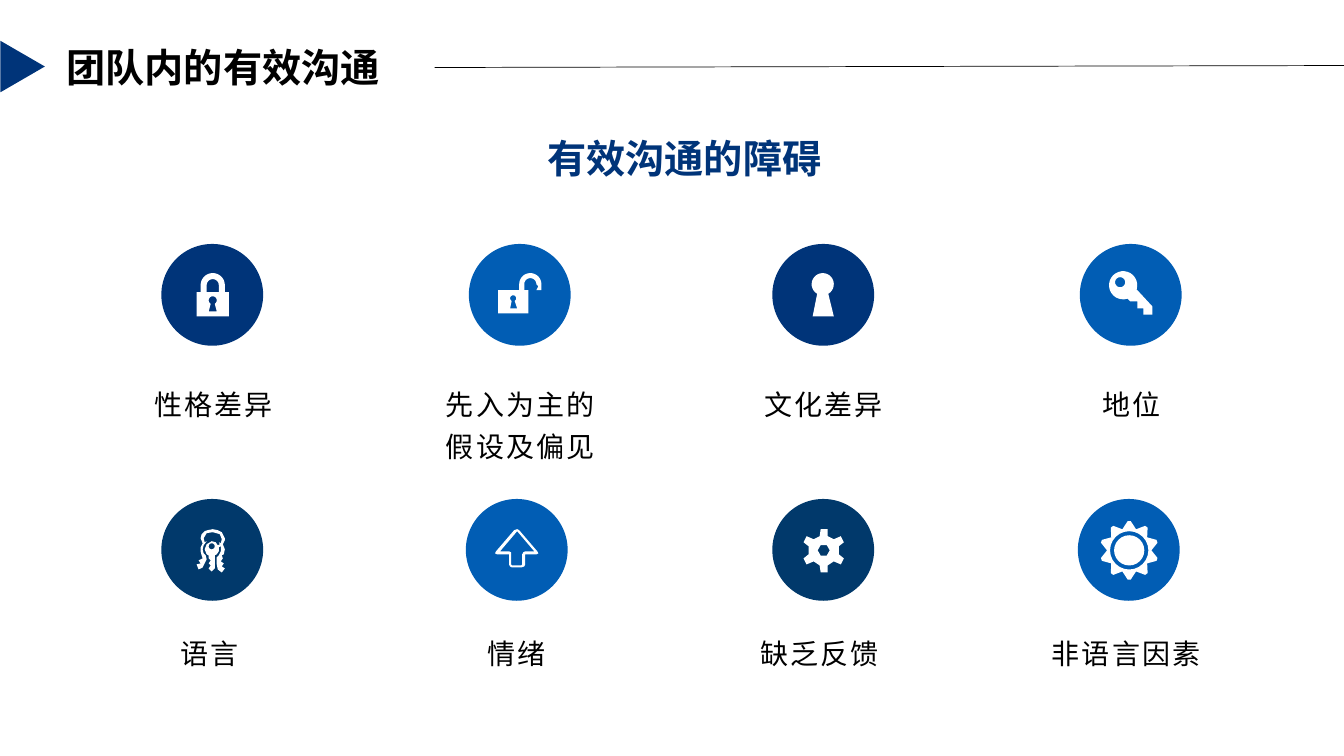
import math
from lxml import etree
from pptx import Presentation
from pptx.dml.color import RGBColor
from pptx.enum import shapes, text
from pptx.oxml.ns import qn
from pptx.util import Inches, Pt

NAVY = RGBColor(0x00, 0x34, 0x79)
BLUE = RGBColor(0x01, 0x5D, 0xB4)
DEEP = RGBColor(0x01, 0x39, 0x6B)
BLACK = RGBColor(0, 0, 0)
WHITE = RGBColor(0xFF, 0xFF, 0xFF)


def style(r, font, size, color, bold=False):
    """Format a run, with the font also set for East Asian text."""
    r.font.name = font
    r.font.size = Pt(size)
    r.font.bold = bold
    r.font.color.rgb = color
    ea = etree.SubElement(r.font._element, qn("a:ea"))
    ea.set("typeface", font)


def arc(cx, cy, radius, start=0, end=360, steps=24):
    """Points on an arc; degrees run clockwise from the right."""
    angles = [math.radians(start + (end - start) * i / steps) for i in range(steps + 1)]
    return [(cx + radius * math.cos(a), cy + radius * math.sin(a)) for a in angles]


prs = Presentation()
prs.slide_width = Inches(13.33)
prs.slide_height = Inches(7.5)
s = prs.slides.add_slide(prs.slide_layouts[5])

# Title bar
title = s.shapes.title
title.left, title.top = Inches(0.56), Inches(0.38)
title.width, title.height = Inches(3.75), Inches(0.57)
tf = title.text_frame
tf.text = "团队内的有效沟通"
tf.vertical_anchor = text.MSO_ANCHOR.TOP
tf.auto_size = text.MSO_AUTO_SIZE.SHAPE_TO_FIT_TEXT
tf.paragraphs[0].alignment = text.PP_ALIGN.JUSTIFY
style(tf.paragraphs[0].runs[0], "Noto Sans CJK JP", 28, BLACK, True)

sp = s.shapes.add_shape(shapes.MSO_SHAPE.ISOSCELES_TRIANGLE,
                        Inches(-0.03), Inches(0.44), Inches(0.51), Inches(0.44))
sp.rotation = 90
sp.shadow.inherit = False
sp.fill.solid()
sp.fill.fore_color.rgb = NAVY
sp.line.fill.background()

rule = s.shapes.add_connector(shapes.MSO_CONNECTOR.STRAIGHT,
                              Inches(4.31), Inches(0.67), Inches(13.33), Inches(0.65))
rule.line.color.rgb = BLACK
rule.line.width = Pt(0.5)
etree.SubElement(rule._element.spPr, qn("a:effectLst"))

# Subtitle
tf = s.shapes.add_textbox(Inches(5.33), Inches(1.28), Inches(2.96), Inches(0.57)).text_frame
tf.text = "有效沟通的障碍"
tf.word_wrap = False
tf.auto_size = text.MSO_AUTO_SIZE.SHAPE_TO_FIT_TEXT
style(tf.paragraphs[0].runs[0], "Noto Sans CJK SC", 28, NAVY, True)

# Circles and labels: circle top, label top, then (circle left, label left, colour, label)
rows = [
    (2.42, 3.73, [(1.6, 0.68, NAVY, "性格差异"), (4.65, 3.72, BLUE, "先入为主的\n假设及偏见"),
                  (7.66, 6.73, NAVY, "文化差异"), (10.71, 9.78, BLUE, "地位")]),
    (4.95, 6.2, [(1.6, 0.64, DEEP, "语言"), (4.62, 3.68, BLUE, "情绪"),
                 (7.66, 6.69, DEEP, "缺乏反馈"), (10.69, 9.73, BLUE, "非语言因素")]),
]
for circle_top, label_top, barriers in rows:
    for circle_left, label_left, color, label in barriers:
        sp = s.shapes.add_shape(shapes.MSO_SHAPE.OVAL, Inches(circle_left),
                                Inches(circle_top), Inches(1.01), Inches(1.01))
        sp.shadow.inherit = False
        sp.fill.solid()
        sp.fill.fore_color.rgb = color
        sp.line.fill.background()

        tf = s.shapes.add_textbox(Inches(label_left), Inches(label_top),
                                  Inches(2.88), Inches(0.6)).text_frame
        tf.text = label
        tf.word_wrap = True
        tf.margin_left = tf.margin_right = tf.margin_top = tf.margin_bottom = Inches(0.05)
        for p in tf.paragraphs:
            p.alignment = text.PP_ALIGN.CENTER
            p.line_spacing = 1.2
            p.space_before = Pt(1)
            style(p.runs[0], "Noto Sans CJK SC", 20, BLACK)
            p.runs[0].font._element.set("spc", "150")

# Icons: each is an outer contour followed by its holes
padlock = [
    [(1.95, 3.14), (1.95, 2.9), (1.99, 2.9), *arc(2.11, 2.83, 0.12, 180, 360),
     (2.23, 2.9), (2.27, 2.9), (2.27, 3.14)],
    [(2.05, 2.9), *arc(2.11, 2.83, 0.06, 180, 360), (2.17, 2.9)],
    [*arc(2.11, 2.98, 0.04, 120, 420), (2.15, 3.09), (2.07, 3.09)],
]
open_padlock = [
    [(4.94, 2.88), (5.15, 2.88), *arc(5.26, 2.82, 0.11, 180, 360), (5.37, 2.88),
     (5.32, 2.88), (5.34, 2.84), *arc(5.26, 2.82, 0.06, 360, 180), (5.2, 2.88),
     (5.24, 2.88), (5.24, 3.11), (4.94, 3.11)],
    [*arc(5.09, 2.96, 0.03, 120, 420), (5.13, 3.06), (5.06, 3.06)],
]
keyhole = [[*arc(8.16, 2.82, 0.11, 120, 420), (8.27, 3.14), (8.06, 3.14)]]
key = [
    [*arc(11.14, 2.83, 0.14, 72, 377), (11.43, 3.04), (11.43, 3.12), (11.34, 3.12),
     (11.34, 3.06), (11.28, 3.06), (11.28, 2.99), (11.21, 2.99)],
    arc(11.11, 2.8, 0.05),
]
key_ring = [
    [(2.22, 5.5), (2.23, 5.45), (2.21, 5.4), (2.23, 5.36), (2.23, 5.34), (2.2, 5.28),
     (2.16, 5.26), (2.11, 5.25), (2.06, 5.26), (2.03, 5.27), (2, 5.3), (1.99, 5.34),
     (2.01, 5.39), (1.99, 5.43), (1.99, 5.47), (2, 5.51), (2.01, 5.54), (1.97, 5.56),
     (1.99, 5.59), (1.95, 5.6), (1.97, 5.65), (2.01, 5.63), (2.05, 5.55), (2.04, 5.51),
     (2.02, 5.49), (2.01, 5.45), (2.02, 5.41), (2.05, 5.37), (2.03, 5.38), (2.02, 5.34),
     (2.05, 5.29), (2.11, 5.28), (2.18, 5.3), (2.2, 5.35), (2.19, 5.39), (2.17, 5.38),
     (2.18, 5.4), (2.16, 5.41), (2.14, 5.38), (2.1, 5.37), (2.05, 5.4), (2.03, 5.45),
     (2.05, 5.5), (2.07, 5.51), (2.07, 5.54), (2.09, 5.56), (2.07, 5.59), (2.09, 5.61),
     (2.07, 5.64), (2.1, 5.67), (2.13, 5.64), (2.13, 5.51), (2.15, 5.5), (2.17, 5.47),
     (2.17, 5.43), (2.19, 5.42), (2.19, 5.47), (2.17, 5.51), (2.15, 5.53), (2.15, 5.6),
     (2.16, 5.65), (2.2, 5.68), (2.23, 5.64), (2.2, 5.62), (2.22, 5.59), (2.19, 5.57),
     (2.21, 5.54), (2.2, 5.51)],
    arc(2.1, 5.42, 0.03),
]
arrow = [
    [(5.13, 5.25), (5.15, 5.26), (5.33, 5.47), (5.34, 5.49), (5.32, 5.5), (5.21, 5.5),
     (5.21, 5.6), (5.2, 5.62), (5.17, 5.63), (5.08, 5.63), (5.06, 5.62), (5.05, 5.6),
     (5.05, 5.5), (4.93, 5.5), (4.91, 5.49), (4.92, 5.47), (5.1, 5.26)],
    [(5.13, 5.27), (4.96, 5.47), (5.05, 5.47), (5.07, 5.48), (5.07, 5.6), (5.08, 5.61),
     (5.17, 5.61), (5.18, 5.6), (5.18, 5.5), (5.19, 5.48), (5.21, 5.47), (5.3, 5.47)],
]
gear = [
    [(8.32, 5.42), (8.37, 5.38), (8.34, 5.32), (8.27, 5.35), (8.21, 5.32), (8.21, 5.25),
     (8.14, 5.25), (8.13, 5.32), (8.07, 5.35), (8, 5.32), (7.97, 5.38), (8.02, 5.42),
     (8.02, 5.5), (7.97, 5.54), (8, 5.6), (8.07, 5.57), (8.13, 5.61), (8.14, 5.68),
     (8.21, 5.68), (8.21, 5.61), (8.27, 5.57), (8.34, 5.6), (8.37, 5.54), (8.32, 5.5)],
    arc(8.17, 5.46, 0.06, steps=6),
]
rays = []
for angle in range(-90, 270, 36):
    rays += arc(11.2, 5.46, 0.29, angle - 3, angle + 3, 2)
    rays += arc(11.2, 5.46, 0.22, angle + 18, angle + 18, 1)
sun = [rays, arc(11.2, 5.46, 0.19), arc(11.2, 5.46, 0.15)]

for icon in (padlock, open_padlock, keyhole, key, key_ring, arrow, gear, sun):
    contours = [[(Inches(x), Inches(y)) for x, y in contour] for contour in icon]
    fb = s.shapes.build_freeform(*contours[0][0])
    fb.add_line_segments(contours[0][1:])
    for hole in contours[1:]:
        fb.move_to(*hole[0])
        fb.add_line_segments(hole[1:])
    sp = fb.convert_to_shape()
    sp.shadow.inherit = False
    sp.fill.solid()
    sp.fill.fore_color.rgb = WHITE
    sp.line.fill.background()

prs.save("out.pptx")
